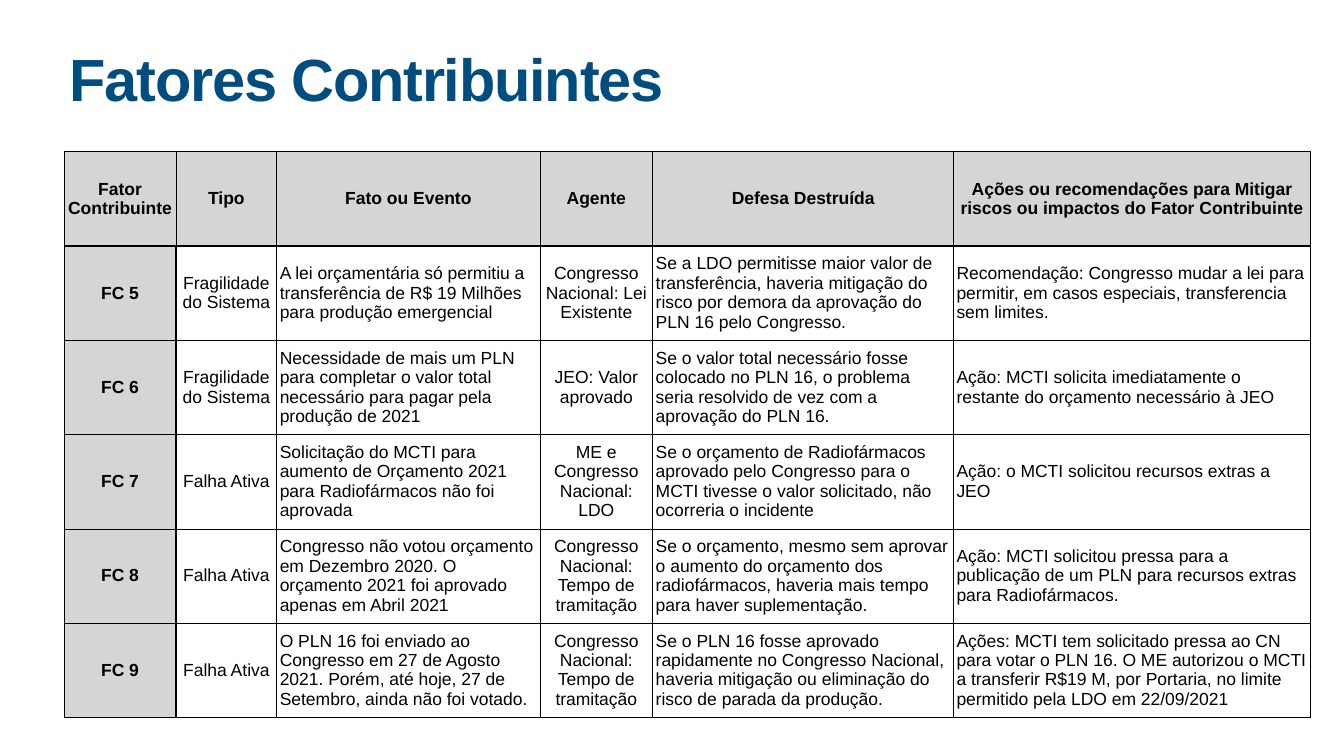
from dataclasses import dataclass

from lxml.etree import SubElement
from pptx import Presentation
from pptx.dml.color import RGBColor
from pptx.enum.text import MSO_ANCHOR, PP_ALIGN
from pptx.oxml.ns import qn
from pptx.util import Cm, Pt


@dataclass(frozen=True)
class Theme:
    font: str = "Arial"
    title_color: str = "004D80"
    text_color: str = "000000"
    border_color: str = "000000"
    heading_fill: str = "D5D5D5"
    title_size: float = 85
    table_size: float = 25
    thin: float = 1
    thick: float = 3


THEME = Theme()
MARGIN = Cm(0.15)

TITLE = "Fatores Contribuintes"
COLUMNS = [  # heading, width in cm, alignment of the body
    ("Fator Contribuinte", 5.64, PP_ALIGN.CENTER),
    ("Tipo", 5.08, PP_ALIGN.CENTER),
    ("Fato ou Evento", 13.26, PP_ALIGN.LEFT),
    ("Agente", 5.69, PP_ALIGN.CENTER),
    ("Defesa Destruída", 15.16, PP_ALIGN.LEFT),
    ("Ações ou recomendações para Mitigar riscos ou impactos do Fator Contribuinte",
     17.98, PP_ALIGN.LEFT),
]
FACTORS = [
    ("FC 5", "Fragilidade do Sistema",
     "A lei orçamentária só permitiu a transferência de R$ 19 Milhões para produção emergencial",
     "Congresso Nacional: Lei Existente",
     "Se a LDO permitisse maior valor de transferência, haveria mitigação do risco por demora "
     "da aprovação do PLN 16 pelo Congresso.",
     "Recomendação: Congresso mudar a lei para permitir, em casos especiais, transferencia "
     "sem limites."),
    ("FC 6", "Fragilidade do Sistema",
     "Necessidade de mais um PLN para completar o valor total necessário para pagar pela "
     "produção de 2021",
     "JEO: Valor aprovado",
     "Se o valor total necessário fosse colocado no PLN 16, o problema seria resolvido de vez "
     "com a aprovação do PLN 16.",
     "Ação: MCTI solicita imediatamente o restante do orçamento necessário à JEO"),
    ("FC 7", "Falha Ativa",
     "Solicitação do MCTI para aumento de Orçamento 2021 para Radiofármacos não foi aprovada",
     "ME e Congresso Nacional: LDO",
     "Se o orçamento de Radiofármacos aprovado pelo Congresso para o MCTI tivesse o valor "
     "solicitado, não ocorreria o incidente",
     "Ação: o MCTI solicitou recursos extras a JEO"),
    ("FC 8", "Falha Ativa",
     "Congresso não votou orçamento em Dezembro 2020. O orçamento 2021 foi aprovado apenas "
     "em Abril 2021",
     "Congresso Nacional: Tempo de tramitação",
     "Se o orçamento, mesmo sem aprovar o aumento do orçamento dos radiofármacos, haveria "
     "mais tempo para haver suplementação.",
     "Ação: MCTI solicitou pressa para a publicação de um PLN para recursos extras para "
     "Radiofármacos."),
    ("FC 9", "Falha Ativa",
     "O PLN 16 foi enviado ao Congresso em 27 de Agosto 2021. Porém, até hoje, 27 de "
     "Setembro, ainda não foi votado.",
     "Congresso Nacional: Tempo de tramitação",
     "Se o PLN 16 fosse aprovado rapidamente no Congresso Nacional, haveria mitigação ou "
     "eliminação do risco de parada da produção.",
     "Ações: MCTI tem solicitado pressa ao CN para votar o PLN 16. O ME autorizou o MCTI a "
     "transferir R$19 M, por Portaria, no limite permitido pela LDO em 22/09/2021"),
]
TABLE_LEFT, TABLE_TOP, ROW_HEIGHT = 3.23, 7.65, 4.75


def set_font(paragraph, size, color, bold):
    font = paragraph.font
    font.name, font.size, font.bold = THEME.font, Pt(size), bold
    font.color.rgb = RGBColor.from_string(color)


def set_margins(holder):
    """Give a cell or a text frame the same narrow margin on all sides."""
    holder.margin_left = holder.margin_right = MARGIN
    holder.margin_top = holder.margin_bottom = MARGIN


def set_borders(cell, right, bottom):
    properties = cell._tc.get_or_add_tcPr()
    widths = {"a:lnL": THEME.thin, "a:lnR": right, "a:lnT": THEME.thin, "a:lnB": bottom}
    for side, width in widths.items():
        line = SubElement(properties, qn(side), w=str(Pt(width)))
        fill = SubElement(line, qn("a:solidFill"))
        SubElement(fill, qn("a:srgbClr"), val=THEME.border_color)


def add_title(page):
    box = page.shapes.add_textbox(Cm(3.35), Cm(2.64), Cm(61.04), Cm(3.99))
    frame = box.text_frame
    frame.word_wrap = True
    set_margins(frame)
    paragraph = frame.paragraphs[0]
    paragraph.line_spacing = 0.8
    span = paragraph.add_run()
    span.text = TITLE
    set_font(paragraph, THEME.title_size, THEME.title_color, True)
    span.font._element.set("spc", "-170")


def fill_cell(cell, text, alignment, is_header, is_label):
    is_heading = is_header or is_label
    cell.text = text
    cell.vertical_anchor = MSO_ANCHOR.MIDDLE
    set_margins(cell)
    set_borders(cell,
                right=THEME.thick if is_label and not is_header else THEME.thin,
                bottom=THEME.thick if is_header else THEME.thin)
    if is_heading:
        cell.fill.solid()
        cell.fill.fore_color.rgb = RGBColor.from_string(THEME.heading_fill)
    else:
        cell.fill.background()
    paragraph = cell.text_frame.paragraphs[0]
    paragraph.alignment = PP_ALIGN.CENTER if is_heading else alignment
    set_font(paragraph, THEME.table_size, THEME.text_color, is_heading)


def add_factor_table(page):
    headings, widths, alignments = zip(*COLUMNS)
    rows = [headings, *FACTORS]
    table = page.shapes.add_table(
        len(rows), len(COLUMNS), Cm(TABLE_LEFT), Cm(TABLE_TOP),
        Cm(sum(widths)), Cm(ROW_HEIGHT * len(rows))).table
    table.first_row = table.horz_banding = False
    for column, width in zip(table.columns, widths):
        column.width = Cm(width)
    for r, texts in enumerate(rows):
        table.rows[r].height = Cm(ROW_HEIGHT)
        for c, text in enumerate(texts):
            fill_cell(table.cell(r, c), text, alignments[c], r == 0, c == 0)


def main():
    deck = Presentation()
    deck.slide_width, deck.slide_height = Cm(67.74), Cm(38.1)
    page = deck.slides.add_slide(deck.slide_layouts[6])
    add_title(page)
    add_factor_table(page)
    deck.save("out.pptx")


if __name__ == "__main__":
    main()
